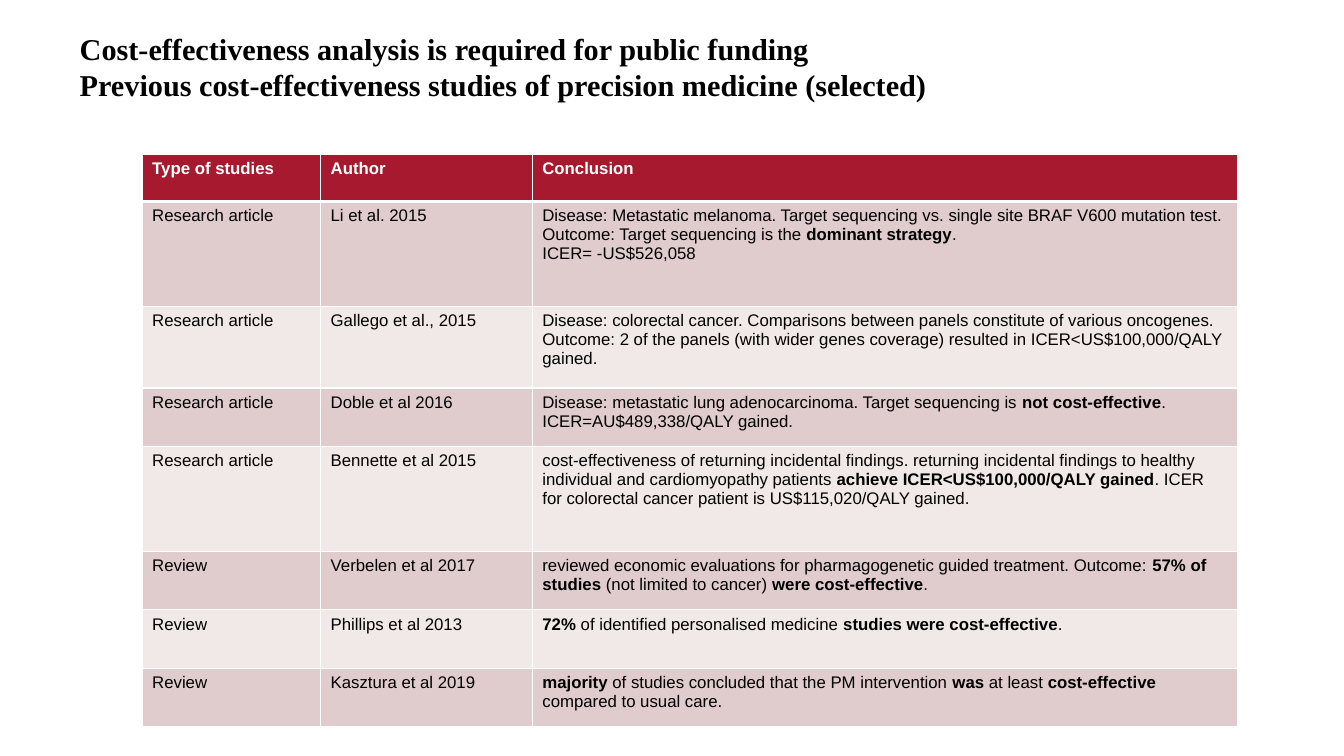
from dataclasses import dataclass

from lxml.etree import SubElement
from pptx import Presentation
from pptx.dml.color import RGBColor
from pptx.enum.text import MSO_ANCHOR
from pptx.oxml.ns import qn
from pptx.util import Inches, Pt

# Content: text between asterisks is bold, a new line starts a new paragraph
TITLE = (
    "Cost-effectiveness analysis is required for public funding",
    "Previous cost-effectiveness studies of precision medicine (selected)",
)
HEADER = ("*Type of studies*", "*Author*", "*Conclusion*")
STUDIES = [
    ("Research article", "Li et al. 2015",
     "Disease: Metastatic melanoma. Target sequencing vs. single site BRAF V600 mutation test. "
     "Outcome: Target sequencing is the *dominant strategy*.\nICER= -US$526,058"),
    ("Research article", "Gallego et al., 2015",
     "Disease: colorectal cancer. Comparisons between panels constitute of various oncogenes. "
     "Outcome: 2 of the panels (with wider genes coverage) resulted in "
     "ICER<US$100,000/QALY gained."),
    ("Research article", "Doble et al 2016",
     "Disease: metastatic lung adenocarcinoma. Target sequencing is *not cost-effective*. "
     "ICER=AU$489,338/QALY gained."),
    ("Research article", "Bennette et al 2015",
     "cost-effectiveness of returning incidental findings. returning incidental findings to "
     "healthy individual and cardiomyopathy patients *achieve ICER<US$100,000/QALY gained*. "
     "ICER for colorectal cancer patient is US$115,020/QALY gained."),
    ("Review", "Verbelen et al 2017",
     "reviewed economic evaluations for pharmagogenetic guided treatment. Outcome: "
     "*57% of studies *(not limited to cancer) *were cost-effective*."),
    ("Review", "Phillips et al 2013",
     "*72% *of identified personalised medicine *studies were cost-effective*."),
    ("Review", "Kasztura et al 2019",
     "*majority* of studies concluded that the PM intervention *was* at least "
     "*cost-effective* compared to usual care."),
]

# Grid, in inches
SLIDE_SIZE = (13.33, 7.5)
TITLE_BOX = (0.79, 0.3, 9.25, 0.71)
TABLE_ORIGIN = (1.41, 1.53)
COLUMN_WIDTHS = (1.77, 2.1, 7)
ROW_HEIGHTS = (0.47, 1.04, 0.81, 0.58, 1.04, 0.58, 0.58, 0.58)


@dataclass(frozen=True)
class Theme:
    title_font: str = "Times New Roman"
    table_font: str = "Arial"
    title_size: float = 21.6
    table_size: float = 12
    ink: str = "000000"
    paper: str = "FFFFFF"
    header: str = "A6192E"
    bands: tuple = ("E1CCCD", "F1E8E8")
    thin_line: float = 1
    thick_line: float = 3


THEME = Theme()


def style_font(font, name, size, color, bold):
    font.name, font.size, font.bold = name, Pt(size), bold
    font.color.rgb = RGBColor.from_string(color)


def add_title(slide):
    frame = slide.shapes.add_textbox(*map(Inches, TITLE_BOX)).text_frame
    frame.word_wrap = True
    frame.vertical_anchor = MSO_ANCHOR.TOP
    frame.margin_left = frame.margin_top = frame.margin_right = frame.margin_bottom = 0
    paragraph = frame.paragraphs[0]
    for index, line in enumerate(TITLE):
        if index:
            paragraph.add_line_break()
        run = paragraph.add_run()
        run.text = line
        style_font(run.font, THEME.title_font, THEME.title_size, THEME.ink, True)


def write_cell(cell, text, color):
    frame = cell.text_frame
    for index, line in enumerate(text.split("\n")):
        paragraph = frame.add_paragraph() if index else frame.paragraphs[0]
        for position, piece in enumerate(line.split("*")):
            if piece:
                run = paragraph.add_run()
                run.text = piece
                style_font(run.font, THEME.table_font, THEME.table_size, color,
                           position % 2 == 1)


def set_borders(cell, top, bottom):
    properties = cell._tc.get_or_add_tcPr()
    widths = {"L": THEME.thin_line, "R": THEME.thin_line, "T": top, "B": bottom}
    for side, width in widths.items():
        line = SubElement(properties, qn(f"a:ln{side}"), w=str(Pt(width)))
        fill = SubElement(line, qn("a:solidFill"))
        SubElement(fill, qn("a:srgbClr"), val=THEME.paper)


def add_studies_table(slide):
    rows = [HEADER, *STUDIES]
    size = (sum(COLUMN_WIDTHS), sum(ROW_HEIGHTS))
    table = slide.shapes.add_table(
        len(rows), len(HEADER), *map(Inches, TABLE_ORIGIN + size)).table
    for column, width in zip(table.columns, COLUMN_WIDTHS):
        column.width = Inches(width)
    for index, (row, height, texts) in enumerate(zip(table.rows, ROW_HEIGHTS, rows)):
        row.height = Inches(height)
        background = THEME.bands[(index - 1) % 2] if index else THEME.header
        color = THEME.ink if index else THEME.paper
        # The thick rule lies between the header and the first study
        top = THEME.thick_line if index == 1 else THEME.thin_line
        bottom = THEME.thick_line if index == 0 else THEME.thin_line
        for cell, text in zip(row.cells, texts):
            set_borders(cell, top, bottom)
            cell.fill.solid()
            cell.fill.fore_color.rgb = RGBColor.from_string(background)
            write_cell(cell, text, color)


def main():
    presentation = Presentation()
    presentation.slide_width, presentation.slide_height = map(Inches, SLIDE_SIZE)
    slide = presentation.slides.add_slide(presentation.slide_layouts[6])
    add_title(slide)
    add_studies_table(slide)
    presentation.save("out.pptx")


if __name__ == "__main__":
    main()
